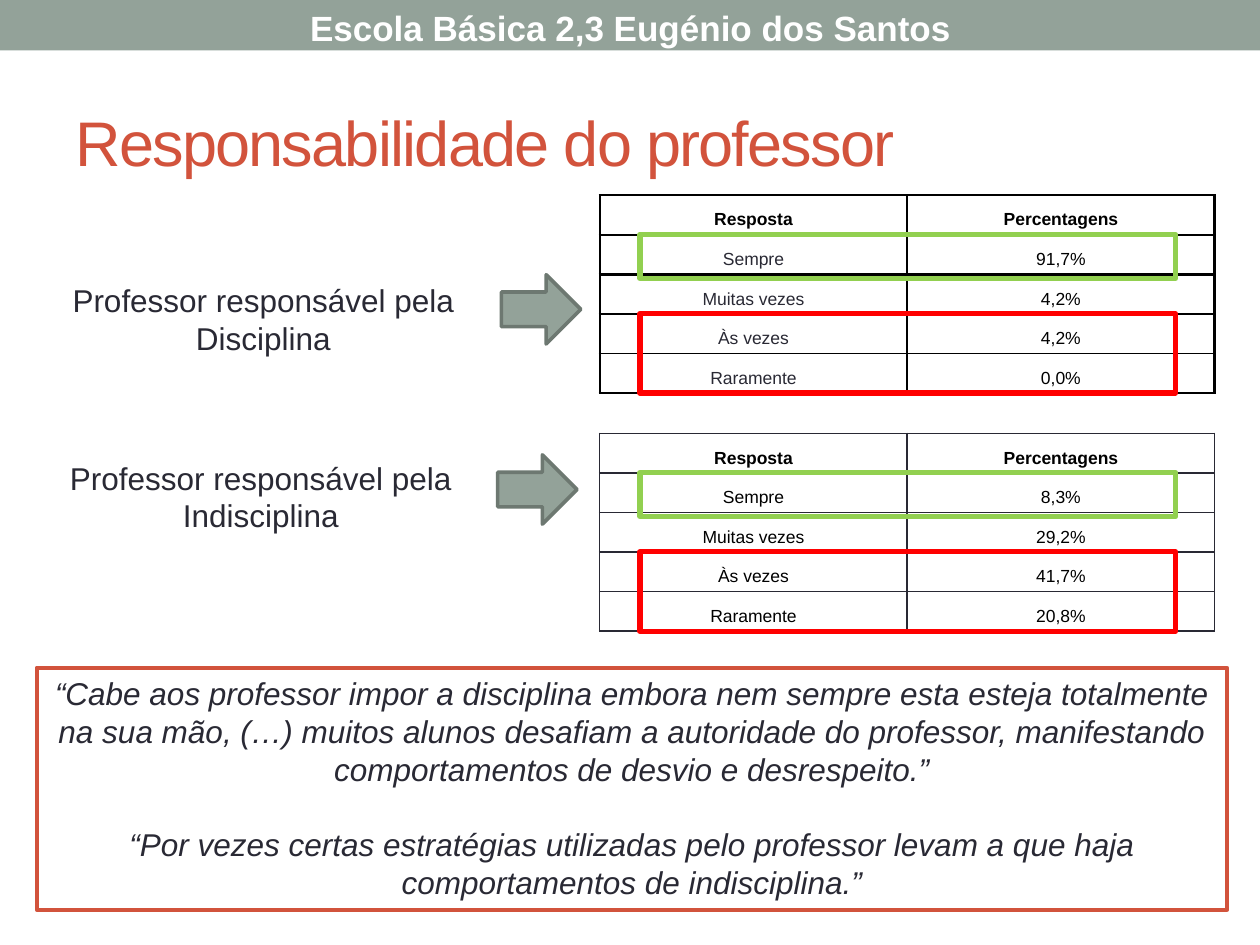
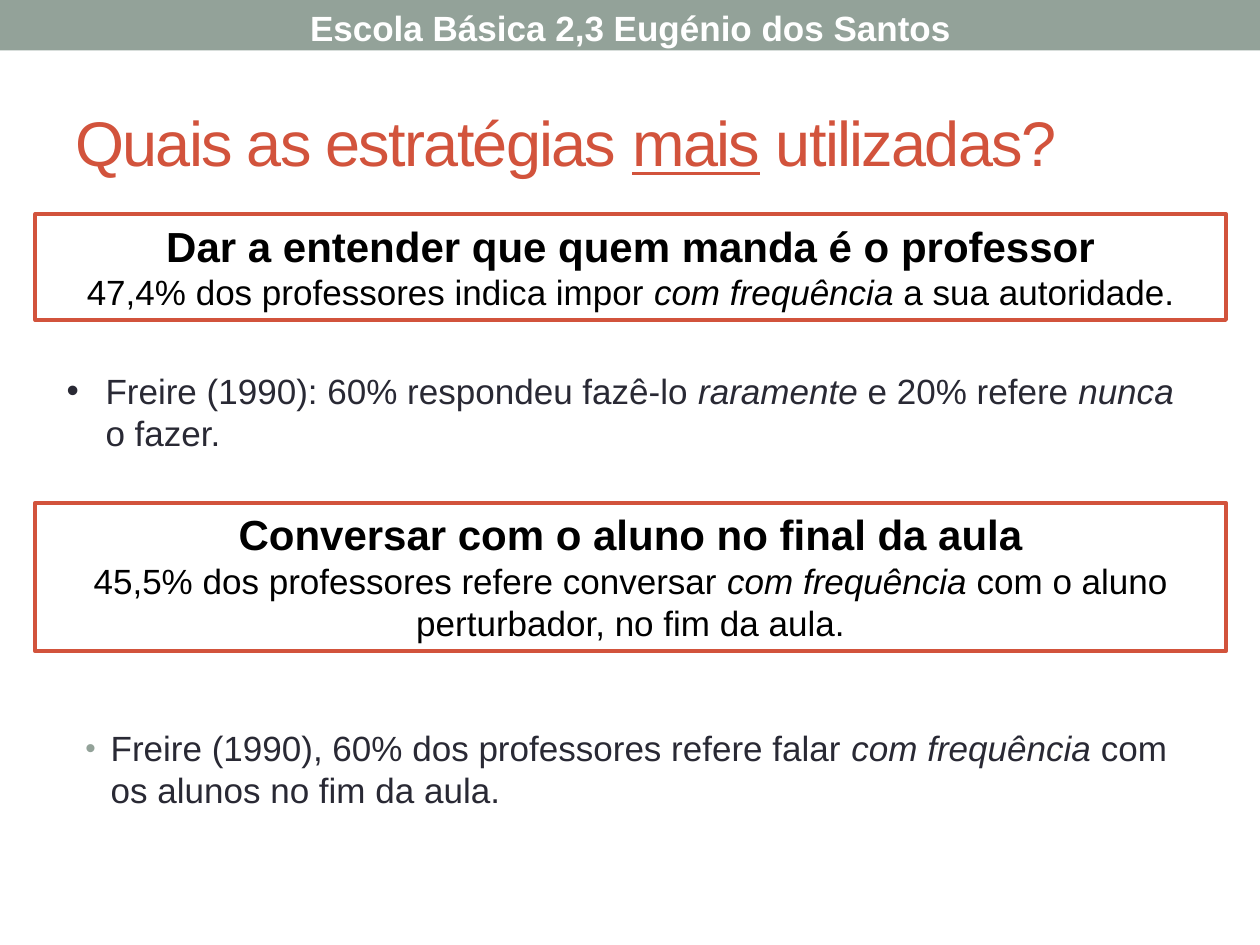
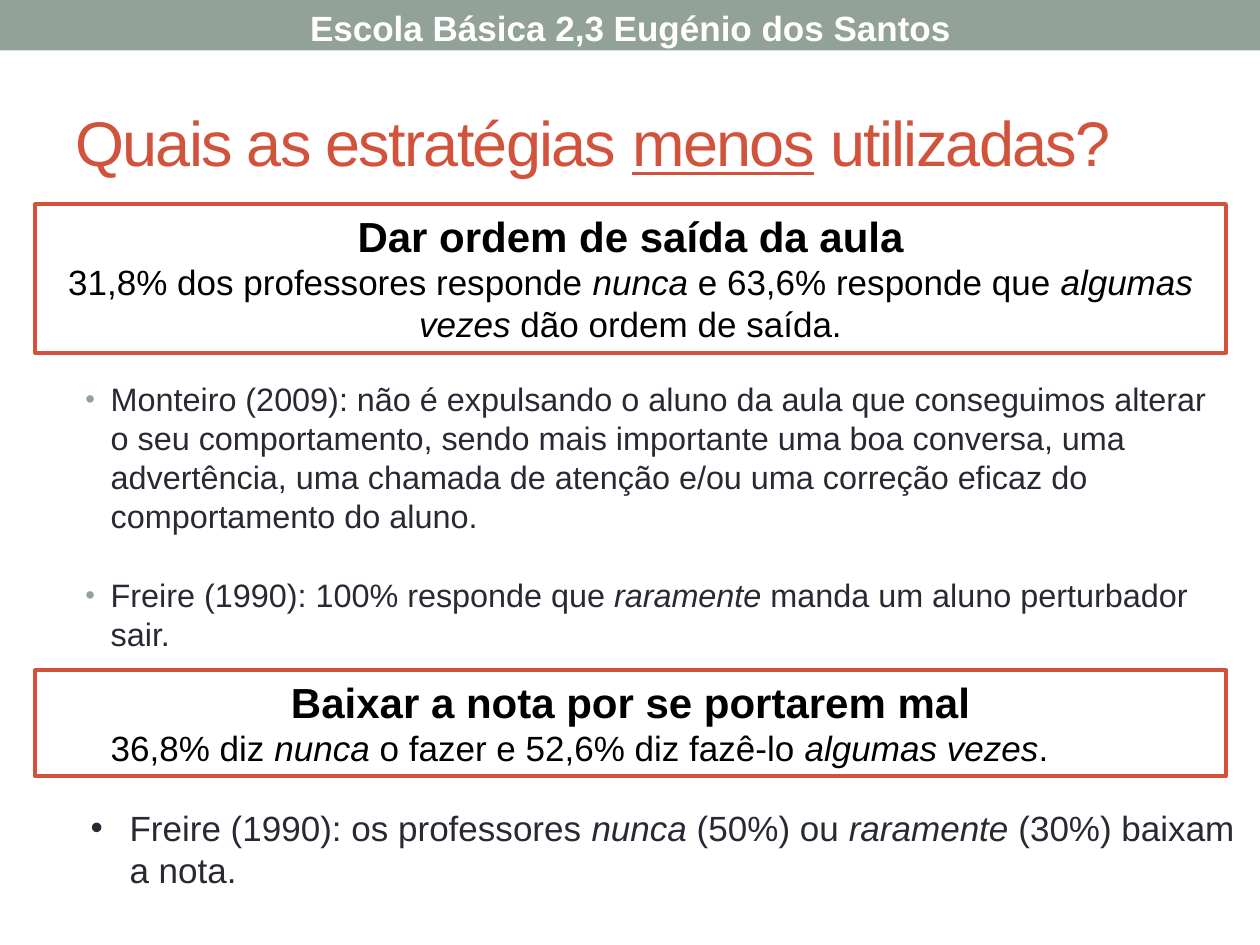
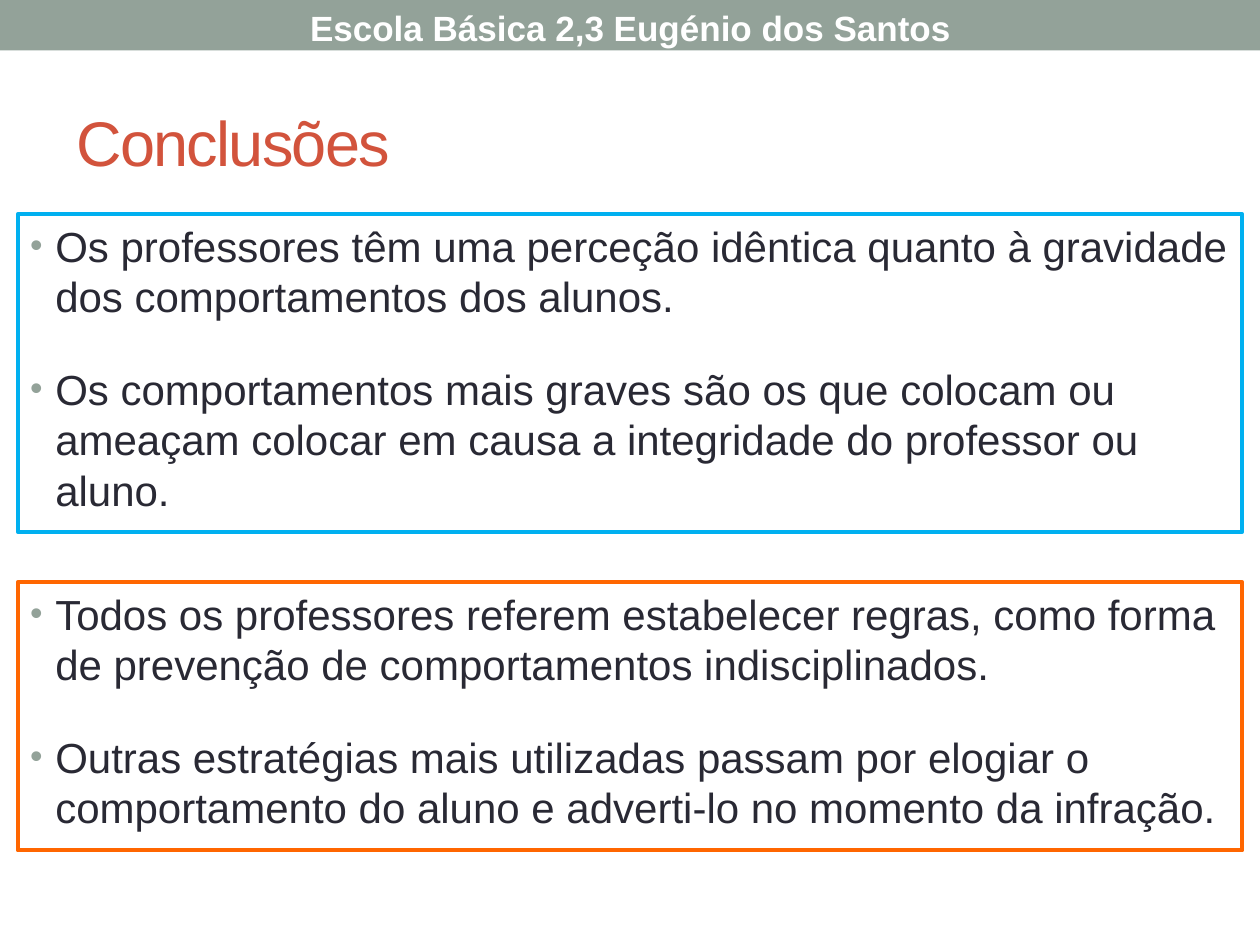
from lxml import etree
from pptx import Presentation
from pptx.dml.color import RGBColor
from pptx.enum.shapes import MSO_SHAPE
from pptx.enum.text import MSO_ANCHOR, PP_ALIGN
from pptx.oxml.ns import qn
from pptx.util import Emu, Pt

RECT, DOWN_ARROW = MSO_SHAPE.RECTANGLE, MSO_SHAPE.DOWN_ARROW
TOP, MIDDLE = MSO_ANCHOR.TOP, MSO_ANCHOR.MIDDLE
LEFT, CENTER = PP_ALIGN.LEFT, PP_ALIGN.CENTER
EMU_PER_PX = 9144
FONT = "Arial"
COLORS = {
    "white": "FFFFFF", "black": "000000", "ink": "292934", "sage": "93A299",
    "sage_dark": "6D7871", "brick": "D2533C", "green": "92D050",
    "red": "FF0000", "blue": "00B0F0", "orange": "FF6600",
}


def px(n):
    return Emu(round(n * EMU_PER_PX))


def rgb(name):
    return RGBColor.from_string(COLORS[name])


def add_bullet(p, color, hang):
    pPr = p._p.get_or_add_pPr()
    pPr.set("indent", str(-px(hang)))
    clr = etree.SubElement(pPr, qn("a:buClr"))
    etree.SubElement(clr, qn("a:srgbClr"), val=COLORS[color])
    size = "85000" if color == "sage" else "100000"
    etree.SubElement(pPr, qn("a:buSzPct"), val=size)
    etree.SubElement(pPr, qn("a:buFont"), typeface=FONT)
    etree.SubElement(pPr, qn("a:buChar"), char="•")


def write(p, text, size=20, color="ink", bold=False, italic=False, align=LEFT,
          mark="italic", tracking=0, gap=0, line=None, indent=0, hang=0, bullet=None):
    """Write text into a paragraph; parts between asterisks take the mark."""
    p.alignment = align
    if gap:
        p.space_before = Pt(gap)
    if line:
        p.line_spacing = line
    if indent:
        p._p.get_or_add_pPr().set("marL", str(px(indent)))
    if bullet:
        add_bullet(p, bullet, hang)
    for i, part in enumerate(text.split("*")):
        if not part:
            continue
        r = p.add_run()
        r.text = part
        f = r.font
        f.name, f.size, f.bold, f.italic = FONT, Pt(size), bold, italic
        f.color.rgb = rgb(color)
        if i % 2:
            setattr(f, mark, True)
        if tracking:
            r._r.get_or_add_rPr().set("spc", str(tracking * 100))


class Deck:
    def __init__(self):
        self.prs = Presentation()
        self.prs.slide_width, self.prs.slide_height = px(1000), px(750)
        self.s = None

    def new_slide(self, title, left=50):
        self.s = self.prs.slides.add_slide(self.prs.slide_layouts[6])
        self.shape(0, 0, 1000, 40, fill="sage")
        self.text(213, 0, 575, 44, ["Escola Básica 2,3 Eugénio dos Santos"],
                  color="white", bold=True, align=CENTER)
        self.text(left, 58, 950 - left, 108, [title], anchor=MIDDLE, size=36,
                  color="brick", mark="underline", tracking=-1)

    def shape(self, x, y, w, h, kind=RECT, fill=None, line=None, weight=2.25, rotation=0):
        sp = self.s.shapes.add_shape(kind, px(x), px(y), px(w), px(h))
        sp.shadow.inherit = False
        sp.rotation = rotation
        if fill:
            sp.fill.solid()
            sp.fill.fore_color.rgb = rgb(fill)
        else:
            sp.fill.background()
        if line:
            sp.line.color.rgb = rgb(line)
            sp.line.width = Pt(weight)
        else:
            sp.line.fill.background()
        return sp

    def text(self, x, y, w, h, paragraphs, border=None, anchor=TOP, gap=0, **fmt):
        if border:
            sp = self.shape(x, y, w, h, line=border)
        else:
            sp = self.s.shapes.add_textbox(px(x), px(y), px(w), px(h))
        tf = sp.text_frame
        tf.word_wrap = True
        tf.vertical_anchor = anchor
        for i, text in enumerate(paragraphs):
            p = tf.add_paragraph() if i else tf.paragraphs[0]
            write(p, text, gap=gap if i else 0, **fmt)
        return tf

    def bullets(self, x, y, w, h, items, indent=50, hang=20, bullet="sage", **fmt):
        self.text(x, y, w, h, items, indent=indent, hang=hang, bullet=bullet, **fmt)

    def card(self, y, h, heading, detail, align=CENTER, indent=0):
        tf = self.text(28, y, 945, h, [heading], border="brick",
                       size=24, color="black", bold=True, align=CENTER)
        write(tf.add_paragraph(), detail, color="black", align=align, indent=indent)

    def arrow(self, x, y):
        self.shape(x, y, 55, 63, kind=DOWN_ARROW, fill="sage", line="sage_dark",
                   weight=2.08, rotation=270)

    def border(self, cell, color, sides):
        tcPr = cell._tc.get_or_add_tcPr()
        for i, (side, weight) in enumerate(sides.items()):
            ln = etree.Element(qn(f"a:{side}"), w=str(Pt(weight)))
            fill = etree.SubElement(ln, qn("a:solidFill"))
            etree.SubElement(fill, qn("a:srgbClr"), val=COLORS[color])
            tcPr.insert(i, ln)

    def answers(self, y, rows, label_color, line_color, side, rules):
        x, w, h = 476, 488, 157
        rows = [("Resposta", "Percentagens")] + rows
        tbl = self.s.shapes.add_table(len(rows), 2, px(x), px(y), px(w), px(h)).table
        tbl.first_row = tbl.horz_banding = False
        for i, row in enumerate(rows):
            tbl.rows[i].height = px(h / len(rows))
            for j, value in enumerate(row):
                cell = tbl.cell(i, j)
                cell.fill.background()
                cell.vertical_anchor = MIDDLE
                cell.margin_left = cell.margin_right = px(5)
                cell.margin_top = cell.margin_bottom = 0
                write(cell.text_frame.paragraphs[0], value, size=10, bold=i == 0,
                      color=label_color if i and j == 0 else "black",
                      align=CENTER, line=1.5)
                self.border(cell, line_color, {"lnL": side, "lnR": side,
                                               "lnT": rules[i], "lnB": rules[i + 1]})
        self.shape(508, y + 31, 425, 35, line="green", weight=3)
        self.shape(508, y + 94, 425, 63, line="red", weight=3)


def responsibility(deck):
    deck.new_slide("Responsabilidade do professor")
    labels = ("Sempre", "Muitas vezes", "Às vezes", "Raramente")
    discipline = ("91,7%", "4,2%", "4,2%", "0,0%")
    indiscipline = ("8,3%", "29,2%", "41,7%", "20,8%")
    deck.answers(155, list(zip(labels, discipline)), "ink", "black",
                 1.5, (1.5, 1.5, 1.5, 1, 1, 1.5))
    deck.answers(344, list(zip(labels, indiscipline)), "black", "ink", 1, (1,) * 6)
    for x, y, topic in ((20, 218, "Disciplina"), (18, 359, "Indisciplina")):
        deck.text(x, y, 378, 71, [f"Professor responsável pela {topic}"],
                  size=18, align=CENTER)
    deck.arrow(402, 214)
    deck.arrow(399, 357)
    deck.text(29, 530, 945, 192, [
        "“Cabe aos professor impor a disciplina embora nem sempre esta esteja "
        "totalmente na sua mão, (…) muitos alunos desafiam a autoridade do professor, "
        "manifestando comportamentos de desvio e desrespeito.”",
        "“Por vezes certas estratégias utilizadas pelo professor levam a que haja "
        "comportamentos de indisciplina.”",
    ], border="brick", size=18, italic=True, align=CENTER, gap=21.6)


def most_used(deck):
    deck.new_slide("Quais as estratégias *mais* utilizadas?")
    deck.card(170, 84, "Dar a entender que quem manda é o professor",
              "47,4% dos professores indica impor *com frequência* a sua autoridade.")
    deck.bullets(43, 288, 906, 108, [
        "Freire (1990): 60% respondeu fazê-lo *raramente* e 20% refere *nunca* o fazer.",
    ], indent=31, hang=31, bullet="ink")
    deck.card(399, 118, "Conversar com o aluno no final da aula",
              "45,5% dos professores refere conversar *com frequência* com o aluno "
              "perturbador, no fim da aula.")
    deck.bullets(28, 572, 922, 110, [
        "Freire (1990), 60% dos professores refere falar *com frequência* com os "
        "alunos no fim da aula.",
    ])


def least_used(deck):
    deck.new_slide("Quais as estratégias *menos* utilizadas?")
    deck.card(162, 118, "Dar ordem de saída da aula",
              "31,8% dos professores responde *nunca* e 63,6% responde que "
              "*algumas vezes* dão ordem de saída.")
    deck.bullets(28, 296, 945, 224, [
        "Monteiro (2009): não é expulsando o aluno da aula que conseguimos alterar o "
        "seu comportamento, sendo mais importante uma boa conversa, uma advertência, "
        "uma chamada de atenção e/ou uma correção eficaz do comportamento do aluno.",
        "Freire (1990): 100% responde que *raramente* manda um aluno perturbador sair.",
    ], size=18.5, gap=23.3)
    deck.card(532, 84, "Baixar a nota por se portarem mal",
              "36,8% diz *nunca* o fazer e 52,6% diz fazê-lo *algumas vezes*.",
              align=LEFT, indent=50)
    deck.bullets(12, 635, 988, 77, [
        "Freire (1990): os professores *nunca* (50%) ou *raramente* (30%) baixam a nota.",
    ], indent=81, hang=31, bullet="ink")


def conclusions(deck):
    deck.new_slide("Conclusões", left=51)
    findings = (
        (170, 252, "blue", [
            "Os professores têm uma perceção idêntica quanto à gravidade dos "
            "comportamentos dos alunos.",
            "Os comportamentos mais graves são os que colocam ou ameaçam colocar em "
            "causa a integridade do professor ou aluno.",
        ]),
        (462, 213, "orange", [
            "Todos os professores referem estabelecer regras, como forma de prevenção "
            "de comportamentos indisciplinados.",
            "Outras estratégias mais utilizadas passam por elogiar o comportamento do "
            "aluno e adverti-lo no momento da infração.",
        ]),
    )
    for y, h, border, items in findings:
        deck.bullets(14, y, 972, h, items, indent=20, border=border, size=24, gap=24)


def main():
    deck = Deck()
    for build in (responsibility, most_used, least_used, conclusions):
        build(deck)
    deck.prs.save("out.pptx")


if __name__ == "__main__":
    main()
